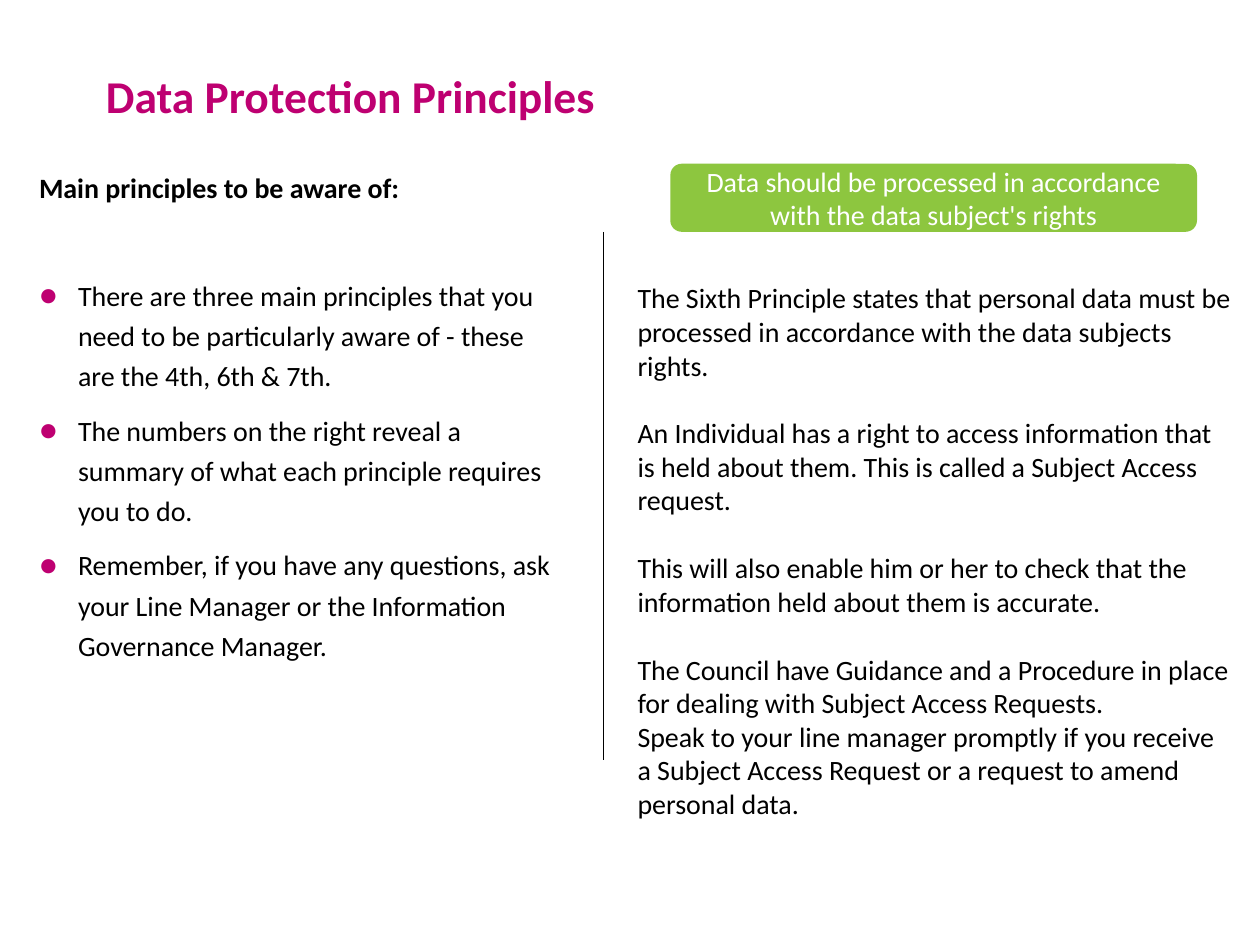
"""Build the slide on data protection principles."""
from dataclasses import dataclass

from lxml import etree
from pptx import Presentation
from pptx.dml.color import RGBColor
from pptx.enum.shapes import MSO_CONNECTOR, MSO_SHAPE
from pptx.enum.text import MSO_ANCHOR, MSO_AUTO_SIZE, PP_ALIGN
from pptx.oxml.ns import qn
from pptx.util import Inches, Pt

LEFT, CENTER = PP_ALIGN.LEFT, PP_ALIGN.CENTER
TOP, MIDDLE = MSO_ANCHOR.TOP, MSO_ANCHOR.MIDDLE
NO_FIT = MSO_AUTO_SIZE.NONE
STRAIGHT = MSO_CONNECTOR.STRAIGHT
ROUNDED = MSO_SHAPE.ROUNDED_RECTANGLE
TITLE_ONLY = 5


@dataclass(frozen=True)
class Theme:
    """Colours, font and type sizes."""
    font: str = "Calibri"
    pink: str = "BE0071"
    green: str = "8DC63F"
    black: str = "000000"
    white: str = "FFFFFF"
    head: float = 26
    body: float = 16
    rule: float = 0.5


@dataclass(frozen=True)
class Box:
    """Place and size in inches."""
    left: float
    top: float
    width: float
    height: float

    def frame(self) -> tuple:
        """Return the four lengths."""
        return tuple(map(Inches, (self.left, self.top, self.width, self.height)))


@dataclass(frozen=True)
class Para:
    """One paragraph and its layout."""
    text: str
    before: float = 0
    bold: bool = False
    bullet: bool = False


THEME = Theme()
GAP = 19.5
INDENT = 0.31

POINTS = [
    Para("Main principles to be aware of:", bold=True),
    Para("There are three main principles that you need to be particularly "
         "aware of - these are the 4th, 6th & 7th.", 38.6, bullet=True),
    Para("The numbers on the right reveal a summary of what each principle "
         "requires you to do.", 8, bullet=True),
    Para("Remember, if you have any questions, ask your Line Manager or the "
         "Information Governance Manager.", 8, bullet=True),
]
DETAILS = [
    Para("The Sixth Principle states that personal data must be processed in "
         "accordance with the data subjects rights."),
    Para("An Individual has a right to access information that is held about "
         "them. This is called a Subject Access request.", GAP),
    Para("This will also enable him or her to check that the information held "
         "about them is accurate.", GAP),
    Para("The Council have Guidance and a Procedure in place for dealing with "
         "Subject Access Requests.", GAP),
    Para("Speak to your line manager promptly if you receive a Subject Access "
         "Request or a request to amend personal data."),
]


def style(para, size: float, color: str, bold: bool = False) -> None:
    """Format the runs of a paragraph."""
    for run in para.runs:
        run.font.name = THEME.font
        run.font.size = Pt(size)
        run.font.bold = bold
        run.font.color.rgb = RGBColor.from_string(color)


def set_frame(frame) -> None:
    """Wrap text from the top, without margins."""
    frame.word_wrap = True
    frame.auto_size = NO_FIT
    frame.vertical_anchor = TOP
    frame.margin_left = frame.margin_right = 0
    frame.margin_top = frame.margin_bottom = 0


def add_bullet(para) -> None:
    """Give a paragraph a round bullet and a hanging indent."""
    props = para._p.get_or_add_pPr()
    props.set("marL", str(Inches(INDENT)))
    props.set("indent", str(-Inches(INDENT)))
    tint = etree.SubElement(props, qn("a:buClr"))
    etree.SubElement(tint, qn("a:srgbClr"), val=THEME.pink)
    etree.SubElement(props, qn("a:buSzPct"), val="110000")
    etree.SubElement(props, qn("a:buFont"), typeface=THEME.font)
    etree.SubElement(props, qn("a:buChar"), char="●")


def add_title(slide, box: Box, text: str) -> None:
    """Place and fill the title."""
    title = slide.shapes.title
    title.left, title.top, title.width, title.height = box.frame()
    frame = title.text_frame
    set_frame(frame)
    frame.text = text
    para = frame.paragraphs[0]
    para.alignment = LEFT
    style(para, THEME.head, THEME.pink, bold=True)


def add_text(slide, box: Box, items: list[Para], spacing: float) -> None:
    """Add a column of paragraphs."""
    frame = slide.shapes.add_textbox(*box.frame()).text_frame
    set_frame(frame)
    for index, item in enumerate(items):
        para = frame.add_paragraph() if index else frame.paragraphs[0]
        para.text = item.text
        para.line_spacing = spacing
        if item.before:
            para.space_before = Pt(item.before)
        if item.bullet:
            add_bullet(para)
        style(para, THEME.body, THEME.black, item.bold)


def add_rule(slide, left: float, top: float, bottom: float) -> None:
    """Add the upright line between the columns."""
    rule = slide.shapes.add_connector(
        STRAIGHT, Inches(left), Inches(top), Inches(left), Inches(bottom))
    rule.line.color.rgb = RGBColor.from_string(THEME.black)
    rule.line.width = Pt(THEME.rule)
    etree.SubElement(rule._element.spPr, qn("a:effectLst"))


def add_banner(slide, box: Box, text: str) -> None:
    """Add the rounded banner."""
    banner = slide.shapes.add_shape(ROUNDED, *box.frame())
    banner.shadow.inherit = False
    banner.fill.solid()
    banner.fill.fore_color.rgb = RGBColor.from_string(THEME.green)
    banner.line.fill.background()
    frame = banner.text_frame
    frame.word_wrap = True
    frame.vertical_anchor = MIDDLE
    frame.text = text
    para = frame.paragraphs[0]
    para.alignment = CENTER
    style(para, THEME.body, THEME.white)


def main() -> None:
    """Draw and save the slide."""
    deck = Presentation()
    deck.slide_width, deck.slide_height = Inches(10), Inches(7.5)
    slide = deck.slides.add_slide(deck.slide_layouts[TITLE_ONLY])
    add_title(slide, Box(0.84, 0.54, 5.34, 0.4), "Data Protection Principles")
    add_text(slide, Box(0.31, 1.3, 4.19, 4.25), POINTS, 1.2)
    add_text(slide, Box(5.06, 2.23, 4.71, 3.79), DETAILS, 1.0)
    add_rule(slide, 4.79, 1.84, 6.03)
    add_banner(slide, Box(5.32, 1.3, 4.18, 0.54),
               "Data should be processed in accordance with the data subject's rights")
    deck.save("out.pptx")


if __name__ == "__main__":
    main()
